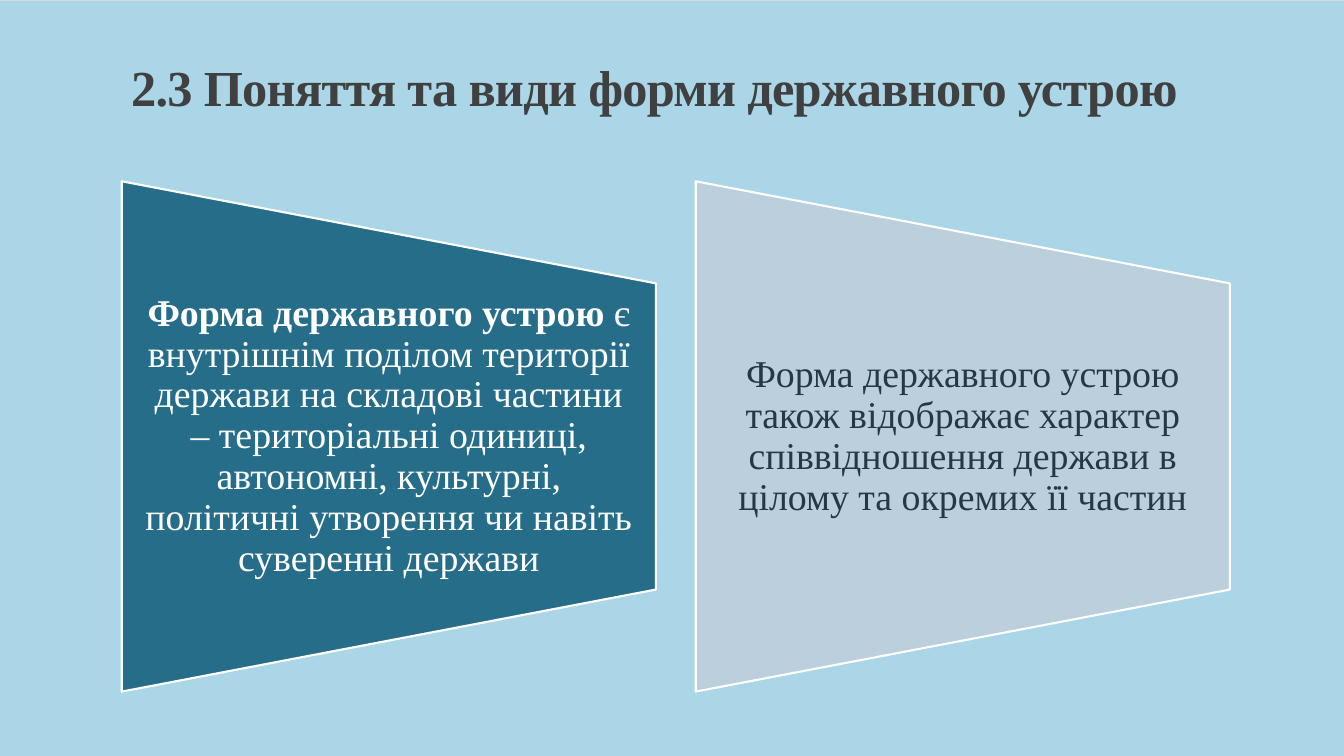
from pptx import Presentation
from pptx.dml.color import RGBColor
from pptx.enum.dml import MSO_PATTERN
from pptx.enum.shapes import MSO_SHAPE
from pptx.enum.text import MSO_ANCHOR, MSO_AUTO_SIZE, PP_ALIGN
from pptx.util import Pt

STRIPES = MSO_PATTERN.DARK_HORIZONTAL
PANEL = MSO_SHAPE.FLOWCHART_MANUAL_OPERATION
MIDDLE, BOTTOM = MSO_ANCHOR.MIDDLE, MSO_ANCHOR.BOTTOM
LEFT, CENTER = PP_ALIGN.LEFT, PP_ALIGN.CENTER
NO_FIT = MSO_AUTO_SIZE.NONE

HEAD = "2.3 Поняття та види форми державного устрою"
CARDS = [
    ("266D8A", "FFFFFF", [
        ("Форма державного устрою ", True),
        ("є внутрішнім поділом території держави на складові частини – "
         "територіальні одиниці, автономні, культурні, політичні утворення "
         "чи навіть суверенні держави", False)]),
    ("BBCFDD", "253848", [
        ("Форма державного устрою також відображає характер "
         "співвідношення держави в цілому та окремих її частин", False)]),
]


def color(code):
    """Turn a hex string into a colour."""
    return RGBColor.from_string(code)


def write(frame, runs, size, ink, font, align=LEFT, lines=1.0, track=0):
    """Fill a text frame with (text, bold) runs in one format."""
    par = frame.paragraphs[0]
    par.alignment, par.line_spacing = align, lines
    par.space_before = Pt(0)
    for text, bold in runs:
        run = par.add_run()
        run.text = text
        run.font.name, run.font.size, run.font.bold = font, Pt(size), bold
        run.font.color.rgb = color(ink)
        if track:
            run._r.get_or_add_rPr().set("spc", str(track))


class Deck:
    """Hold the style and the current slide."""

    font = "Times New Roman"

    def __init__(self):
        """Open a wide deck with one title slide."""
        self.file = Presentation()
        self.file.slide_width, self.file.slide_height = Pt(960), Pt(540)
        self.slide = self.file.slides.add_slide(self.file.slide_layouts[5])

    def back(self, fore, base):
        """Stripe the background."""
        fill = self.slide.background.fill
        fill.patterned()
        fill.pattern = STRIPES
        fill.fore_color.rgb, fill.back_color.rgb = color(fore), color(base)

    def title(self, text, x, y, w, h):
        """Place and fill the title."""
        box = self.slide.shapes.title
        box.left, box.top, box.width, box.height = Pt(x), Pt(y), Pt(w), Pt(h)
        frame = box.text_frame
        frame.auto_size, frame.vertical_anchor = NO_FIT, BOTTOM
        write(frame, [(text, True)], 36, "404040", self.font,
              lines=0.85, track=-50)

    def panel(self, x, y, w, h, fill):
        """Draw a trapezoid turned on its side."""
        shape = self.slide.shapes.add_shape(PANEL, Pt(x), Pt(y), Pt(w), Pt(h))
        shape.rotation = 270
        shape.shadow.inherit = False
        shape.fill.solid()
        shape.fill.fore_color.rgb = color(fill)
        shape.line.color.rgb = color("FFFFFF")
        shape.line.width = Pt(1.5)

    def label(self, runs, x, y, w, h, ink):
        """Add centred text over a panel."""
        box = self.slide.shapes.add_textbox(Pt(x), Pt(y), Pt(w), Pt(h))
        frame = box.text_frame
        frame.word_wrap, frame.vertical_anchor = True, MIDDLE
        frame.margin_left = frame.margin_right = Pt(13.5)
        frame.margin_top = frame.margin_bottom = Pt(0)
        write(frame, runs, 27, ink, self.font, align=CENTER, lines=0.9)


def main():
    """Build and save the slide."""
    deck = Deck()
    deck.back("AAD6E7", "D9D9D9")
    deck.title(HEAD, 86.4, 22.3, 792, 64.8)
    for i, (fill, ink, runs) in enumerate(CARDS):
        x = 87 + 410 * i
        deck.panel(x + 8.5, 121, 364.5, 381.5, fill)
        deck.label(runs, x, 202.3, 381.5, 219, ink)
    deck.file.save("out.pptx")


if __name__ == "__main__":
    main()
